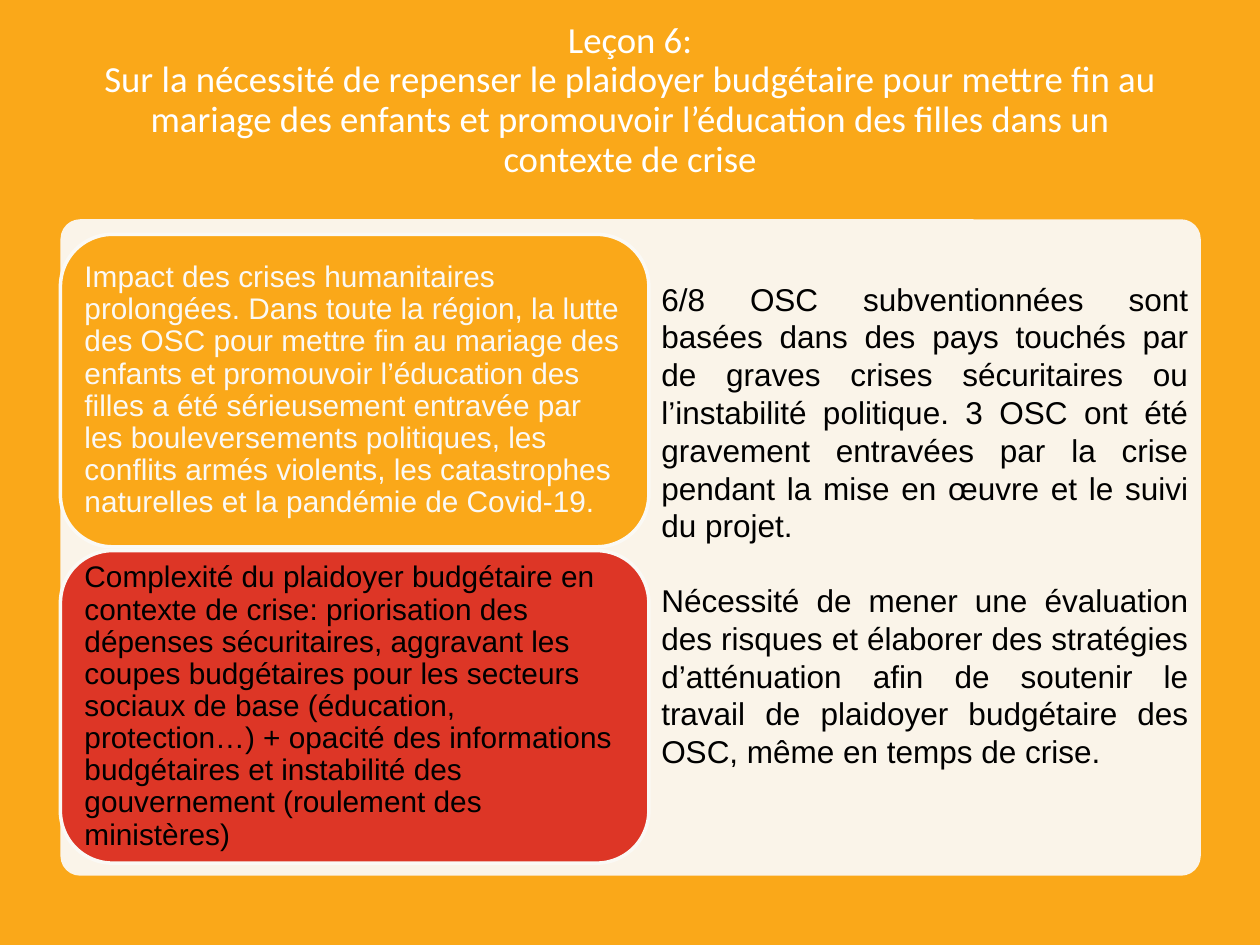
from pptx import Presentation
from pptx.util import Emu, Pt
from pptx.dml.color import RGBColor
from pptx.enum.shapes import MSO_SHAPE
from pptx.enum.text import MSO_ANCHOR, PP_ALIGN
from lxml import etree

PX = 9144  # 100 px to the inch
HUES = {"gold": "FAA819", "cream": "FAF9F5", "red": "DD3626",
        "white": "FFFFFF", "black": "000000"}
NS = "http://schemas.openxmlformats.org/drawingml/2006/main"

deck = Presentation()
deck.slide_width, deck.slide_height = Emu(1000 * PX), Emu(750 * PX)
slide = deck.slides.add_slide(deck.slide_layouts[6])


def add_box(kind, box, fill):
    shape = slide.shapes.add_shape(kind, *[Emu(v * PX) for v in box])
    shape.shadow.inherit = False
    shape.fill.solid()
    shape.fill.fore_color.rgb = RGBColor.from_string(HUES[fill])
    shape.line.fill.background()
    return shape


def write(shape, texts, size, face, hue, align, pitch=1.0):
    frame = shape.text_frame
    frame.word_wrap = True
    frame.vertical_anchor = MSO_ANCHOR.MIDDLE
    for i, text in enumerate(texts):
        para = frame.paragraphs[0] if i == 0 else frame.add_paragraph()
        para.text = text
        para.alignment = align
        para.line_spacing = pitch
        para.space_before = Pt(21 if i else 0)
        para.font.size = Pt(size)
        para.font.name = face
        para.font.color.rgb = RGBColor.from_string(HUES[hue])


# Background
slide.background.fill.solid()
slide.background.fill.fore_color.rgb = RGBColor.from_string(HUES["cream"])
add_box(MSO_SHAPE.RECTANGLE, (0, 0, 1000, 750), "gold")

# Title
title = slide.shapes.add_textbox(*[Emu(v * PX) for v in (69, 0, 862, 160)])
write(title, ["Leçon 6:\vSur la nécessité de repenser le plaidoyer budgétaire pour "
              "mettre fin au mariage des enfants et promouvoir l’éducation des "
              "filles dans un contexte de crise"],
      21, "Calibri", "white", PP_ALIGN.CENTER, 0.9)

# Panel, slightly see-through
panel = add_box(MSO_SHAPE.ROUNDED_RECTANGLE, (48, 174, 905, 521), "cream")
panel.adjustments[0] = 0.03
tint = panel.fill._xPr.find(f".//{{{NS}}}srgbClr")
etree.SubElement(tint, f"{{{NS}}}alpha", val="95000")

# Cards
cards = [
    ("gold", "cream",
     "Impact des crises humanitaires prolongées. Dans toute la région, la lutte "
     "des OSC pour mettre fin au mariage des enfants et promouvoir l’éducation "
     "des filles a été sérieusement entravée par les bouleversements politiques, "
     "les conflits armés violents, les catastrophes naturelles et la pandémie "
     "de Covid-19."),
    ("red", "black",
     "Complexité du plaidoyer budgétaire en contexte de crise: priorisation des "
     "dépenses sécuritaires, aggravant les coupes budgétaires pour les secteurs "
     "sociaux de base (éducation, protection…) + opacité des informations "
     "budgétaires et instabilité des gouvernement (roulement des ministères)"),
]
for i, (fill, hue, text) in enumerate(cards):
    card = add_box(MSO_SHAPE.ROUNDED_RECTANGLE, (48, 186 + 251 * i, 467, 248), fill)
    card.line.color.rgb = RGBColor.from_string(HUES["cream"])
    card.line.width = Pt(2)
    frame = card.text_frame
    frame.margin_left = frame.margin_right = Emu(7 * PX)
    frame.margin_top = frame.margin_bottom = Emu(7 * PX)
    write(card, [text], 17, "Arial", hue, PP_ALIGN.LEFT, 0.9)

# Findings
notes = slide.shapes.add_textbox(*[Emu(v * PX) for v in (515, 217, 438, 404)])
write(notes, [
    "6/8 OSC subventionnées sont basées dans des pays touchés par de graves crises "
    "sécuritaires ou l’instabilité politique. 3 OSC ont été gravement entravées par "
    "la crise pendant la mise en œuvre et le suivi du projet.",
    "Nécessité de mener une évaluation des risques et élaborer des stratégies "
    "d’atténuation afin de soutenir le travail de plaidoyer budgétaire des OSC, "
    "même en temps de crise.",
], 18, "Arial", "black", PP_ALIGN.JUSTIFY)
notes.text_frame.vertical_anchor = MSO_ANCHOR.TOP

deck.save("out.pptx")
